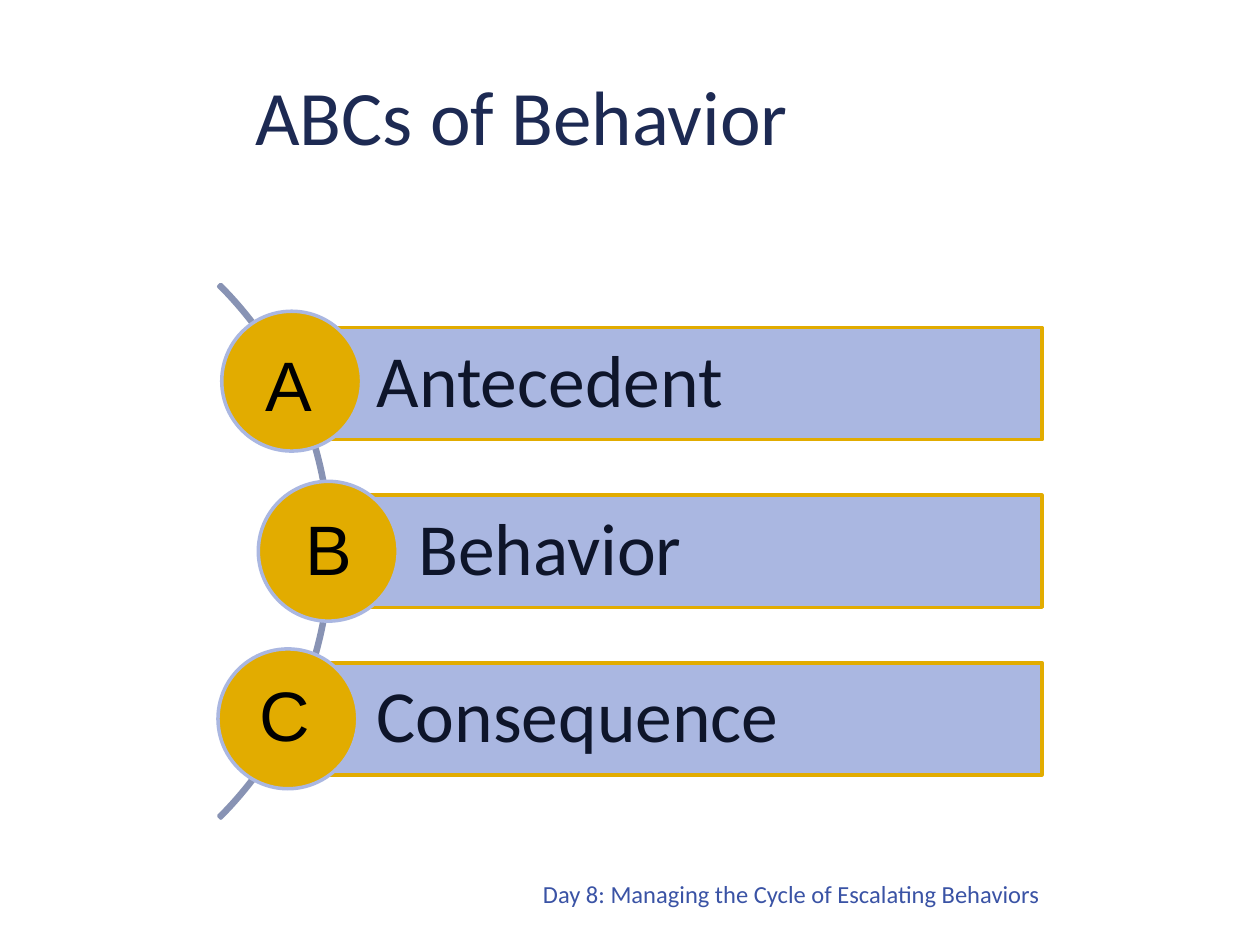
from dataclasses import dataclass

from pptx import Presentation
from pptx.dml.color import RGBColor
from pptx.enum.shapes import MSO_SHAPE as Shape
from pptx.enum.text import MSO_ANCHOR as Anchor, PP_ALIGN as Align
from pptx.util import Emu, Pt

PX = 9144
NAVY = RGBColor(0x1D, 0x2A, 0x53)
INK = RGBColor(0x0E, 0x15, 0x2A)
BLUE = RGBColor(0x3A, 0x53, 0xA5)
SLATE = RGBColor(0x88, 0x93, 0xB4)
LAVENDER = RGBColor(0xAA, 0xB7, 0xE1)
GOLD = RGBColor(0xE2, 0xAC, 0x00)
BLACK = RGBColor(0x00, 0x00, 0x00)

BAR_RIGHT, BAR_TOP, BAR_HEIGHT, ROW_STEP = 827, 260, 89, 133
CIRCLE_SIZE = 111


@dataclass(frozen=True)
class Box:
    left: int
    top: int
    width: int
    height: int

    def emu(self) -> list[Emu]:
        return [Emu(n * PX) for n in (self.left, self.top, self.width, self.height)]


@dataclass(frozen=True)
class Style:
    size: int
    font: str
    color: RGBColor
    align: Align = Align.LEFT
    anchor: Anchor = Anchor.TOP


@dataclass(frozen=True)
class Step:
    word: str
    bar_left: int
    circle_left: int
    circle_top: int
    letter: Box


TITLE = Style(44, "Calibri", NAVY, Align.CENTER, Anchor.MIDDLE)
FOOTER = Style(14, "Calibri", BLUE, Align.RIGHT, Anchor.BOTTOM)
WORD = Style(42, "Calibri", INK, anchor=Anchor.MIDDLE)
LETTER = Style(40, "Arial", BLACK)

STEPS = [
    Step("Antecedent", 228, 176, 247, Box(201, 266, 64, 77)),
    Step("Behavior", 261, 205, 382, Box(233, 396, 62, 77)),
    Step("Consequence", 228, 173, 515, Box(196, 528, 62, 77)),
]


def write(shape, text: str, style: Style) -> None:
    frame = shape.text_frame
    frame.text = text
    frame.word_wrap = True
    frame.vertical_anchor = style.anchor
    para = frame.paragraphs[0]
    para.alignment = style.align
    font = para.runs[0].font
    font.size, font.name = Pt(style.size), style.font
    font.color.rgb = style.color


def add_text(page, box: Box, text: str, style: Style) -> None:
    write(page.shapes.add_textbox(*box.emu()), text, style)


def add_figure(page, kind: Shape, box: Box, line: RGBColor, fill: RGBColor | None = None):
    shape = page.shapes.add_shape(kind, *box.emu())
    shape.shadow.inherit = False
    if fill is None:
        shape.fill.background()
    else:
        shape.fill.solid()
        shape.fill.fore_color.rgb = fill
    shape.line.color.rgb = line
    shape.line.width = Pt(2)
    return shape


def add_arc(page) -> None:
    arc = add_figure(page, Shape.BLOCK_ARC, Box(-336, 138, 599, 599), SLATE)
    for index, value in enumerate((189, 27, 0.004)):
        arc.adjustments[index] = value


def add_step(page, step: Step, row: int) -> None:
    bar_box = Box(step.bar_left, BAR_TOP + row * ROW_STEP,
                  BAR_RIGHT - step.bar_left, BAR_HEIGHT)
    bar = add_figure(page, Shape.RECTANGLE, bar_box, GOLD, LAVENDER)
    write(bar, step.word, WORD)
    frame = bar.text_frame
    frame.margin_left = Emu(71 * PX)
    frame.margin_top = frame.margin_right = frame.margin_bottom = Emu(12 * PX)
    frame.paragraphs[0].line_spacing = 0.9
    circle_box = Box(step.circle_left, step.circle_top, CIRCLE_SIZE, CIRCLE_SIZE)
    add_figure(page, Shape.OVAL, circle_box, LAVENDER, GOLD)
    add_text(page, step.letter, step.word[0], LETTER)


def main() -> None:
    deck = Presentation()
    deck.slide_width, deck.slide_height = Emu(1000 * PX), Emu(750 * PX)
    page = deck.slides.add_slide(deck.slide_layouts[6])
    add_text(page, Box(363, 669, 472, 57),
             "Day 8: Managing the Cycle of Escalating Behaviors", FOOTER)
    add_text(page, Box(39, 41, 764, 100), "ABCs of Behavior ", TITLE)
    add_arc(page)
    for row, step in enumerate(STEPS):
        add_step(page, step, row)
    deck.save("out.pptx")


if __name__ == "__main__":
    main()
